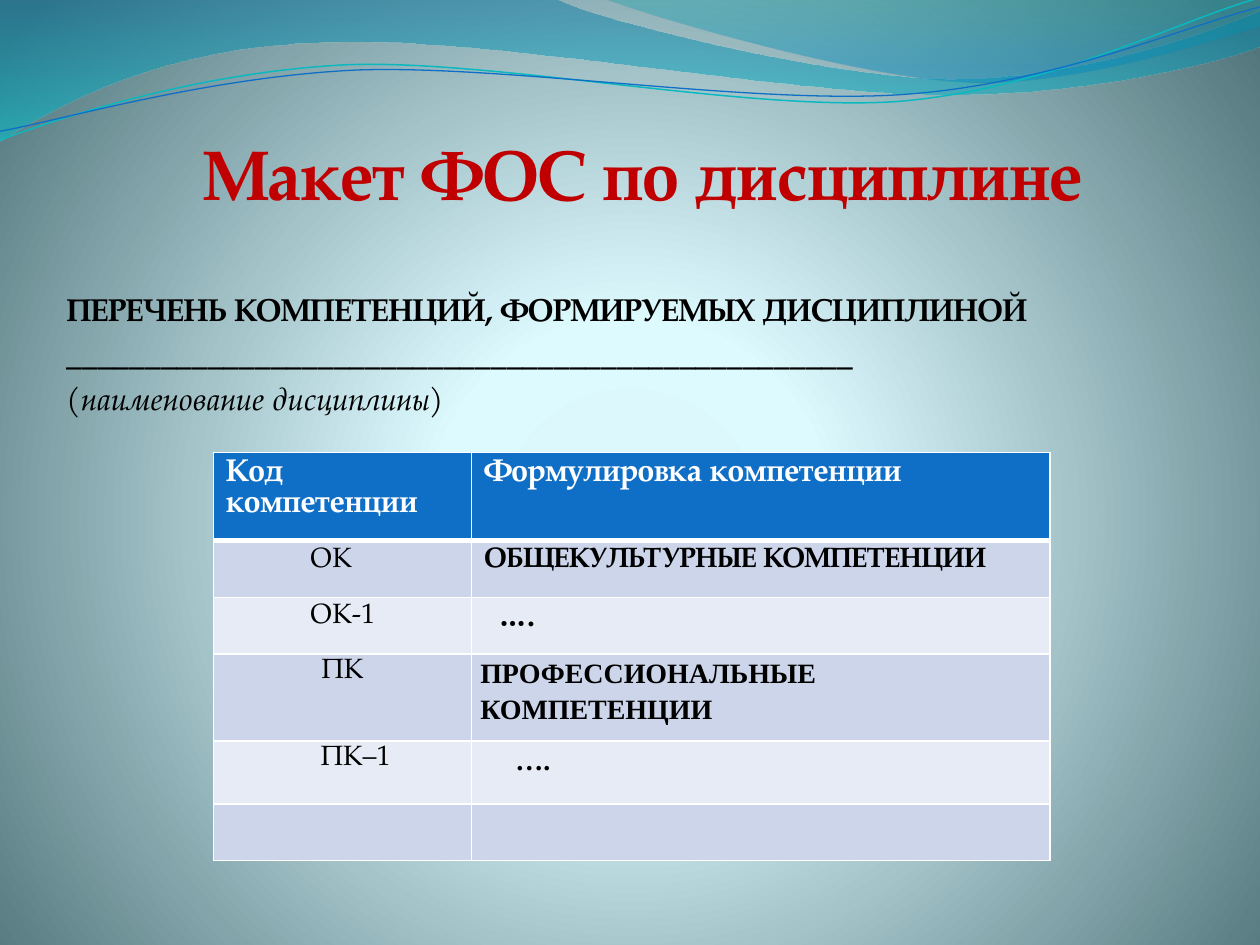
from lxml.etree import SubElement
from pptx import Presentation
from pptx.dml.color import RGBColor
from pptx.enum.text import MSO_ANCHOR as Anchor, MSO_AUTO_SIZE as AutoSize, PP_ALIGN as Align
from pptx.oxml import parse_xml
from pptx.oxml.ns import nsdecls, qn
from pptx.util import Pt

THEME = {
    "font": "TeX Gyre Pagella", "serif": "Times New Roman",
    "title": "C00000", "text": "000000", "light": "FFFFFF",
    "header": "0F6FC6", "bands": ("CCD5EA", "E7EBF5"),
    "title_size": 40, "body_size": 18, "cell_size": 16,
}
TITLE = "Макет ФОС по дисциплине "
BODY = [  # text, bold, italic
    ("ПЕРЕЧЕНЬ КОМПЕТЕНЦИЙ, ФОРМИРУЕМЫХ ДИСЦИПЛИНОЙ", True, False),
    ("_" * 50, True, False),
    ("(наименование дисциплины)", False, True),
]
HEADERS = ["Код компетенции", "Формулировка компетенции"]
ROWS = [  # each cell: text and its options
    [("ОК", {"indent": 48}), ("ОБЩЕКУЛЬТУРНЫЕ КОМПЕТЕНЦИИ", {"bold": True})],
    [("ОК-1", {"indent": 48}), ("….", {"bold": True, "indent": 9, "size": 18})],
    [("ПК", {"tight": True, "align": Align.CENTER}),
     ("ПРОФЕССИОНАЛЬНЫЕ КОМПЕТЕНЦИИ", {"tight": True, "bold": True, "font": THEME["serif"]})],
    [("ПК–1", {"tight": True, "align": Align.CENTER, "indent": 15}),
     ("….", {"tight": True, "bold": True, "indent": 20, "font": THEME["serif"]})],
    [("", {}), ("", {})],
]
COLUMN_WIDTHS = [147.6, 330.5]
ROW_HEIGHTS = [32.4, 32.4, 32.4, 49.7, 36, 32.4]

# Outlines: a start point, then two numbers for a line or six for a curve
WAVES = [
    ([(0, 0), (317, -1), (343, 12, 478, 45, 546, 45), (614, 45, 690, 19, 720, 6), (721, 26),
      (708, 32, 626, 55, 537, 54), (448, 54, 275, 20, 185, 24), (93, 26, 33, 60, -1, 81)],
     [(0, "0074A1", 45), (100, "00C6CF", 55)]),
    ([(345, -1), (367, 8, 491, 45, 554, 47), (616, 49, 692, 23, 720, 15), (720, 0)],
     [(0, "00A1A9", 30), (80, "008BBF", 45)]),
]
STRANDS = [
    ([(0, 80), (35, 67, 114, 41, 199, 37), (284, 34, 427, 64, 513, 58),
      (600, 51, 675, 11, 719, -1)], "0AB8BF", 0.85),
    ([(0, 75), (34, 69, 118, 44, 204, 40), (290, 37, 430, 60, 516, 54),
      (602, 48, 677, 15, 720, 4)], "0F6FC6", 0.75),
]
BACKDROP = [(0, "DBF5F9", 100), (25, "DDFAFF", 100), (100, "52767C", 100)]
DOWNWARD = '<a:lin ang="5400000" scaled="0"/>'
RADIAL = ('<a:path path="circle"><a:fillToRect l="10000" t="110000" r="10000" b="100000"/>'
          '</a:path>')


def color(code):
    return RGBColor.from_string(code)


def set_gradient(fill, root, stops, direction):
    """Give the fill under root its own stops (position, colour, opacity) and direction."""
    fill.gradient()
    gradient = next(root.iter(qn("a:gradFill")))
    stop_xml = "".join(
        f'<a:gs pos="{place * 1000}"><a:srgbClr val="{code}">'
        f'<a:alpha val="{opacity * 1000}"/></a:srgbClr></a:gs>'
        for place, code, opacity in stops)
    fresh = parse_xml(f'<a:gradFill {nsdecls("a")} rotWithShape="1">'
                      f"<a:gsLst>{stop_xml}</a:gsLst>{direction}</a:gradFill>")
    gradient.getparent().replace(gradient, fresh)


def add_outline(page, outline, close):
    """Build a freeform through the end points, then bend its curved segments."""
    ends = [(Pt(part[-2]), Pt(part[-1])) for part in outline]
    builder = page.shapes.build_freeform(*ends[0])
    builder.add_line_segments(ends[1:], close=close)
    shape = builder.convert_to_shape()
    shape.shadow.inherit = False
    segments = list(shape._element.iter(qn("a:lnTo")))
    for segment, part in zip(segments, outline[1:]):
        if len(part) == 6:
            curve = SubElement(segment.getparent(), qn("a:cubicBezTo"))
            for x, y in zip(part[::2], part[1::2]):
                SubElement(curve, qn("a:pt"), x=str(Pt(x) - shape.left), y=str(Pt(y) - shape.top))
            segment.getparent().replace(segment, curve)
    return shape


def style(para, size, code, bold=False, italic=False, font=THEME["font"]):
    for span in para.runs:
        span.font.name, span.font.size = font, Pt(size)
        span.font.bold, span.font.italic = bold, italic
        span.font.color.rgb = color(code)


def add_borders(cell, bottom=1):
    properties = cell._tc.get_or_add_tcPr()
    for place, (side, width) in enumerate([("L", 1), ("R", 1), ("T", 1), ("B", bottom)]):
        line = parse_xml(
            f'<a:ln{side} {nsdecls("a")} w="{Pt(width)}"><a:solidFill>'
            f'<a:srgbClr val="{THEME["light"]}"/></a:solidFill></a:ln{side}>')
        properties.insert(place, line)


def fill_cell(cell, text, band, code, size=THEME["cell_size"], bold=False, indent=0,
              tight=False, align=Align.LEFT, font=THEME["font"], bottom=1):
    cell.text_frame.text = text
    para = cell.text_frame.paragraphs[0]
    para.alignment = align
    style(para, size, code, bold, font=font)
    if indent:
        para._p.get_or_add_pPr().set("marL", str(Pt(indent)))
    if tight:
        para.line_spacing = 1.15
        cell.margin_left = cell.margin_right = Pt(5)
        cell.margin_top = cell.margin_bottom = 0
    cell.fill.solid()
    cell.fill.fore_color.rgb = color(band)
    add_borders(cell, bottom)


def add_title(page):
    box = page.shapes.title
    box.left, box.top, box.width, box.height = Pt(48.4), Pt(31.6), Pt(648), Pt(91)
    frame = box.text_frame
    frame.text = TITLE
    frame.auto_size, frame.vertical_anchor = AutoSize.NONE, Anchor.BOTTOM
    frame.margin_left = frame.margin_right = frame.margin_bottom = 0
    frame.paragraphs[0].alignment = Align.CENTER
    style(frame.paragraphs[0], THEME["title_size"], THEME["title"], bold=True)


def add_body(page):
    frame = page.shapes.add_textbox(Pt(31), Pt(128.2), Pt(648), Pt(368.6)).text_frame
    frame.word_wrap = True
    frame.margin_top = Pt(37.7)
    frame.text = "\n".join(text for text, _, _ in BODY)
    for place, (para, (_, bold, italic)) in enumerate(zip(frame.paragraphs, BODY)):
        para.space_before = Pt(3.6 if place else 0)
        style(para, THEME["body_size"], THEME["text"], bold, italic)


def add_competences(page):
    table = page.shapes.add_table(len(ROW_HEIGHTS), len(COLUMN_WIDTHS), Pt(121.9), Pt(258.5),
                                  Pt(sum(COLUMN_WIDTHS)), Pt(235.4)).table
    for column, width in zip(table.columns, COLUMN_WIDTHS):
        column.width = Pt(width)
    for row, height in zip(table.rows, ROW_HEIGHTS):
        row.height = Pt(height)
    for column, text in enumerate(HEADERS):
        fill_cell(table.cell(0, column), text, THEME["header"], THEME["light"],
                  size=THEME["body_size"], bold=True, bottom=3)
    for index, row in enumerate(ROWS):
        for column, (text, options) in enumerate(row):
            fill_cell(table.cell(index + 1, column), text, THEME["bands"][index % 2],
                      THEME["text"], **options)


def main():
    deck = Presentation()
    deck.slide_width, deck.slide_height = Pt(720), Pt(540)
    page = deck.slides.add_slide(deck.slide_layouts[5])
    set_gradient(page.background.fill, page._element, BACKDROP, RADIAL)
    for outline, stops in WAVES:
        wave = add_outline(page, outline, close=True)
        set_gradient(wave.fill, wave._element, stops, DOWNWARD)
        wave.line.fill.background()
    for outline, code, width in STRANDS:
        strand = add_outline(page, outline, close=False)
        strand.fill.background()
        strand.line.color.rgb, strand.line.width = color(code), Pt(width)
    add_title(page)
    add_body(page)
    add_competences(page)
    deck.save("out.pptx")


if __name__ == "__main__":
    main()
